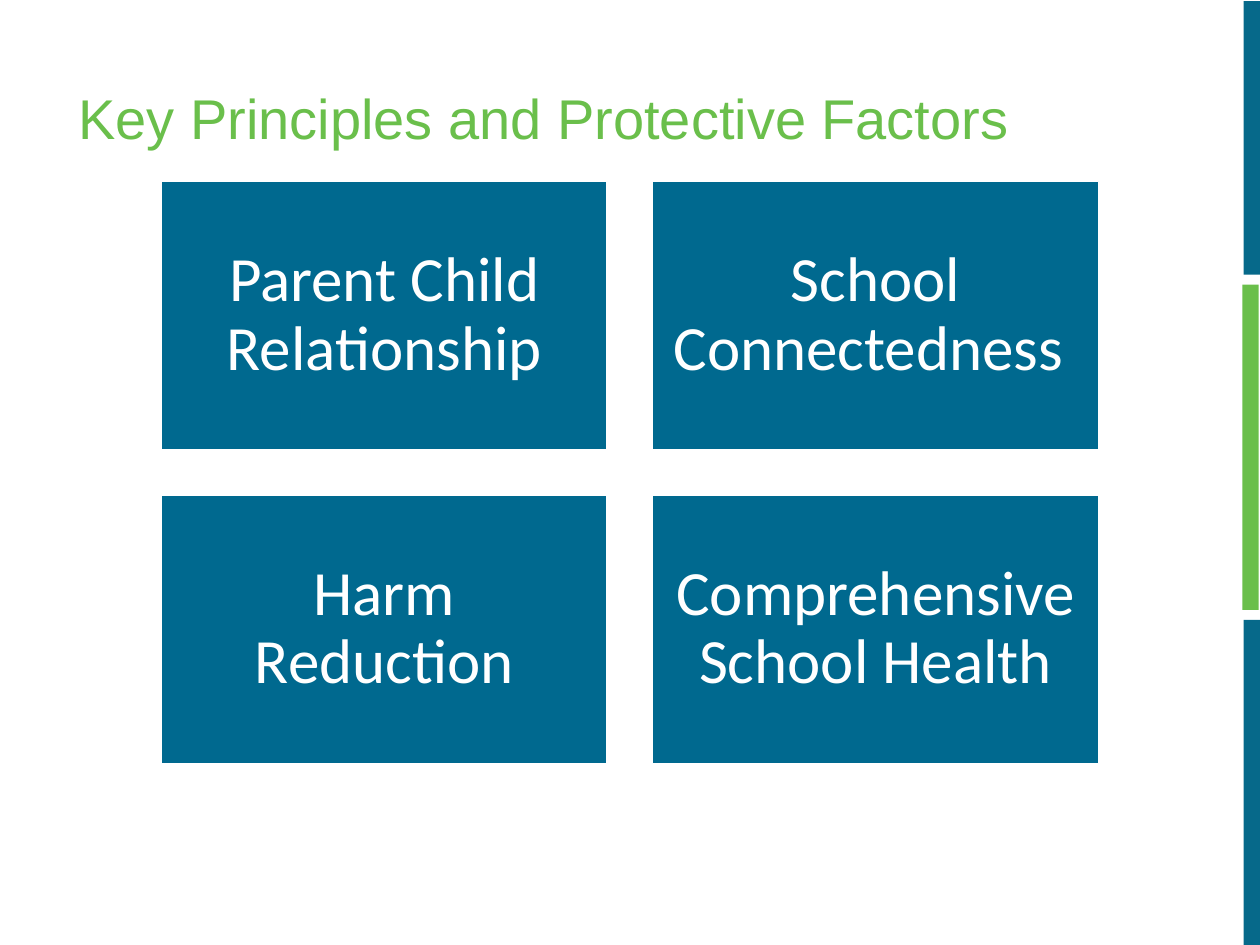
from pptx import Presentation
from pptx.dml.color import RGBColor
from pptx.enum.shapes import MSO_SHAPE
from pptx.enum.text import MSO_ANCHOR, MSO_AUTO_SIZE, PP_ALIGN
from pptx.util import Inches, Pt

COLORS = {"band": "06698A", "green": "6ABF4B", "card": "00698F", "white": "FFFFFF"}


def color(name):
    return RGBColor.from_string(COLORS[name])


def write(frame, text, *, size, font, ink, align, inset):
    frame.text = text
    frame.word_wrap = True
    frame.auto_size = MSO_AUTO_SIZE.NONE
    frame.vertical_anchor = MSO_ANCHOR.MIDDLE
    frame.margin_left = frame.margin_right = Inches(inset[0])
    frame.margin_top = frame.margin_bottom = Inches(inset[1])
    paragraph = frame.paragraphs[0]
    paragraph.alignment = align
    paragraph.line_spacing = 0.9
    paragraph.font.size = Pt(size)
    paragraph.font.name = font
    paragraph.font.color.rgb = color(ink)


class SlideBuilder:
    title_font = "Arial"
    card_font = "Calibri"

    def __init__(self, slide):
        self.slide = slide

    def title(self, text, left, top, width, height):
        heading = self.slide.shapes.title
        heading.left, heading.top = Inches(left), Inches(top)
        heading.width, heading.height = Inches(width), Inches(height)
        write(heading.text_frame, text, size=32, font=self.title_font,
              ink="green", align=PP_ALIGN.LEFT, inset=(0.1, 0.05))

    def block(self, left, top, width, height, fill, line=None):
        block = self.slide.shapes.add_shape(
            MSO_SHAPE.RECTANGLE, Inches(left), Inches(top), Inches(width), Inches(height))
        block.shadow.inherit = False
        block.fill.solid()
        block.fill.fore_color.rgb = color(fill)
        if line:
            block.line.color.rgb = color(line)
            block.line.width = Pt(1)
        else:
            block.line.fill.background()
        return block

    def card(self, text, left, top, width, height):
        card = self.block(left, top, width, height, "card", line="white")
        write(card.text_frame, text, size=36, font=self.card_font,
              ink="white", align=PP_ALIGN.CENTER, inset=(0.15, 0.15))


def main():
    deck = Presentation()
    deck.slide_width, deck.slide_height = Inches(10), Inches(7.5)
    builder = SlideBuilder(deck.slides.add_slide(deck.slide_layouts[5]))

    # Side bands
    for left, top, height, fill in [(9.87, 4.92, 2.58, "band"),
                                    (9.86, 2.26, 2.58, "green"),
                                    (9.87, 0.01, 2.17, "band")]:
        builder.block(left, top, 0.13, height, fill)

    # Title
    builder.title("Key Principles and Protective Factors ", 0.52, 0.4, 9.05, 1.12)

    # Two-by-two grid of factors
    factors = ["Parent Child Relationship", "School Connectedness ",
               "Harm Reduction", "Comprehensive School Health"]
    width, height, gap = 3.54, 2.13, 0.36
    for index, factor in enumerate(factors):
        row, column = divmod(index, 2)
        builder.card(factor, 1.28 + column * (width + gap),
                     1.44 + row * (height + gap), width, height)

    deck.save("out.pptx")


if __name__ == "__main__":
    main()
